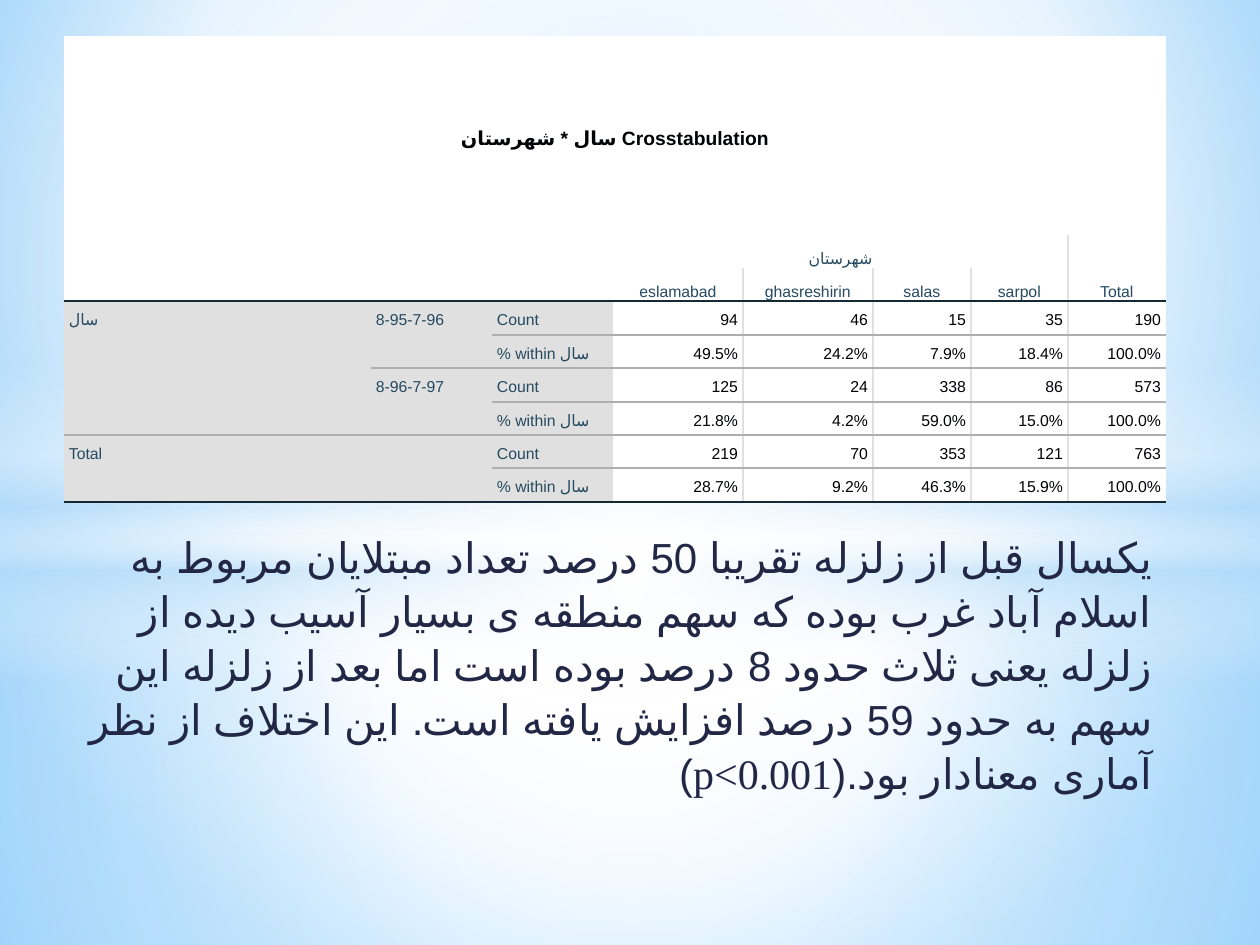
from dataclasses import dataclass
from typing import Optional

from lxml import etree
from pptx import Presentation
from pptx.dml.color import RGBColor
from pptx.enum.lang import MSO_LANGUAGE_ID as LANG
from pptx.enum.shapes import MSO_SHAPE as SHAPE
from pptx.enum.text import MSO_ANCHOR as ANCHOR, PP_ALIGN as ALIGN
from pptx.oxml import parse_xml
from pptx.oxml.ns import qn
from pptx.util import Emu, Pt

NS = "http://schemas.openxmlformats.org/drawingml/2006/main"
NO_STYLE = "{2D5ABB26-0587-4C30-8999-92F81FD0307C}"
INK, LABEL, DARK = "010205", "264A60", "152935"
WHITE, SHADE, GREY, SKY = "FFFFFF", "E0E0E0", "AEAEAE", "B4DCFA"
CENTER = (50, 50, 50, 50)


@dataclass
class Gradient:
    stops: list
    focus: Optional[tuple] = None


@dataclass
class Glow:
    shape: SHAPE
    box: tuple
    gradient: Gradient


@dataclass
class Rule:
    at: int
    first: int
    last: int
    color: str


@dataclass
class Entry:
    row: int
    col: int
    runs: list
    size: int = 9
    color: str = LABEL
    bold: bool = False
    align: ALIGN = ALIGN.LEFT
    anchor: ANCHOR = ANCHOR.TOP


BACKDROP = Gradient([(0, "9ED5FF", 100), (60, WHITE, 100), (100, "5BB9FF", 100)], (20, 10, 20, 60))
GLOWS = [
    Glow(SHAPE.RECTANGLE, (0, 533, 1260, 412),
         Gradient([(0, WHITE, 91), (37, WHITE, 76), (100, SKY, 79)], CENTER)),
    Glow(SHAPE.RECTANGLE, (0, 0, 1260, 533),
         Gradient([(0, WHITE, 89), (48, WHITE, 62), (100, SKY, 79)], CENTER)),
    Glow(SHAPE.RECTANGLE, (0, 365, 1260, 315),
         Gradient([(0, WHITE, 0), (29, WHITE, 30), (45, SKY, 40),
                   (55, WHITE, 26), (65, SKY, 60), (100, WHITE, 0)])),
    Glow(SHAPE.OVAL, (0, 221, 1260, 703),
         Gradient([(0, WHITE, 100), (54, WHITE, 0)], CENTER)),
]

COLS = [307, 121, 121, 130, 130, 98, 97, 98]
ROWS = [199, 33, 33, 34, 33, 34, 33, 33, 34]
MERGES = [(0, 0, 0, 7), (1, 0, 2, 2), (1, 3, 1, 6), (1, 7, 2, 7),
          (3, 0, 6, 0), (3, 1, 4, 1), (5, 1, 6, 1), (7, 0, 8, 1)]
ROW_RULES = [Rule(3, 0, 8, DARK), Rule(4, 2, 8, GREY), Rule(5, 1, 8, GREY), Rule(6, 2, 8, GREY),
             Rule(7, 0, 8, GREY), Rule(8, 2, 8, GREY), Rule(9, 0, 8, DARK)]
COL_RULES = [Rule(x, 2, 9, SHADE) for x in (4, 5, 6)] + [Rule(7, 1, 9, SHADE)]
CITIES = ["eslamabad", "ghasreshirin", "salas", "sarpol"]
VALUES = [
    ["94", "46", "15", "35", "190"],
    ["49.5%", "24.2%", "7.9%", "18.4%", "100.0%"],
    ["125", "24", "338", "86", "573"],
    ["21.8%", "4.2%", "59.0%", "15.0%", "100.0%"],
    ["219", "70", "353", "121", "763"],
    ["28.7%", "9.2%", "46.3%", "15.9%", "100.0%"],
]
STORY = [
    ("یکسال قبل از زلزله تقریبا 50 درصد تعداد مبتلایان مربوط به اسلام آباد غرب بوده که سهم "
     "منطقه ی بسیار آسیب دیده از زلزله یعنی ثلاث حدود 8 درصد بوده است اما بعد از زلزله این سهم "
     "به حدود 59 درصد افزایش یافته است. این اختلاف از نظر آماری معنادار بود.(", "Calibri", "Arial"),
    ("p<0.001", "Times New Roman", "Times New Roman"),
    (")", "Calibri", "Arial"),
]


def px(n: int) -> Emu:
    return Emu(round(n * 914400 / 126))


def rgb(color: str) -> RGBColor:
    return RGBColor.from_string(color)


def apply(obj, fmt: dict) -> None:
    for name, value in fmt.items():
        setattr(obj, name, value)


def gradient_xml(g: Gradient):
    stops = "".join(
        f'<a:gs pos="{pos * 1000}"><a:srgbClr val="{color}"><a:alpha val="{alpha * 1000}"/>'
        f'</a:srgbClr></a:gs>' for pos, color, alpha in g.stops)
    way = '<a:lin ang="5400000" scaled="0"/>'
    if g.focus:
        l, t, r, b = (v * 1000 for v in g.focus)
        way = f'<a:path path="circle"><a:fillToRect l="{l}" t="{t}" r="{r}" b="{b}"/></a:path>'
    return parse_xml(f'<a:gradFill xmlns:a="{NS}" rotWithShape="1"><a:gsLst>{stops}</a:gsLst>{way}</a:gradFill>')


def fill_gradient(owner, element, g: Gradient) -> None:
    owner.fill.solid()
    solid = next(element.iter(qn("a:solidFill")))
    solid.getparent().replace(solid, gradient_xml(g))


def draw_glow(s, glow: Glow) -> None:
    sp = s.shapes.add_shape(glow.shape, *map(px, glow.box))
    sp.shadow.inherit = False
    fill_gradient(sp, sp._element.spPr, glow.gradient)
    sp.line.fill.background()


def add_run(p, text: str, latin: str, complex_font: str, fmt: dict, color: str) -> None:
    r = p.add_run()
    r.text = text
    apply(r.font, {"name": latin, "language_id": LANG.FARSI, **fmt})
    r.font.color.rgb = rgb(color)
    etree.SubElement(r._r.get_or_add_rPr(), qn("a:cs"), typeface=complex_font)


def rule_color(rules: list, at: int, i: int) -> Optional[str]:
    return next((u.color for u in rules if u.at == at and u.first <= i < u.last), None)


def draw_borders(cell, row: int, col: int) -> None:
    edges = {
        "lnL": rule_color(COL_RULES, col, row),
        "lnR": rule_color(COL_RULES, col + cell.span_width, row),
        "lnT": rule_color(ROW_RULES, row, col),
        "lnB": rule_color(ROW_RULES, row + cell.span_height, col),
    }
    tc_pr = cell._tc.get_or_add_tcPr()
    for tag, color in edges.items():
        ln = etree.SubElement(tc_pr, qn(f"a:{tag}"), w=str(Pt(1)))
        fill = etree.SubElement(ln, qn("a:solidFill" if color else "a:noFill"))
        if color:
            etree.SubElement(fill, qn("a:srgbClr"), val=color)


def write_entry(table, e: Entry) -> None:
    cell = table.cell(e.row, e.col)
    cell.vertical_anchor = e.anchor
    p = cell.text_frame.paragraphs[0]
    p.alignment = e.align
    for text, font in e.runs:
        add_run(p, text, font, "Arial", {"size": Pt(e.size), "bold": e.bold}, e.color)


def table_entries() -> list:
    head = {"align": ALIGN.CENTER, "anchor": ANCHOR.BOTTOM}
    entries = [
        Entry(0, 0, [("سال", "Calibri"), (" * شهرستان Crosstabulation", "Arial")],
              11, INK, True, ALIGN.CENTER, ANCHOR.MIDDLE),
        Entry(1, 3, [("شهرستان", "Calibri")], **head),
        Entry(1, 7, [("Total", "Arial")], **head),
        Entry(3, 0, [("سال", "Calibri")]),
        Entry(3, 1, [("8-95-7-96", "Arial")]),
        Entry(5, 1, [("8-96-7-97", "Arial")]),
        Entry(7, 0, [("Total", "Arial")]),
    ]
    entries += [Entry(2, c, [(city, "Arial")], **head) for c, city in enumerate(CITIES, 3)]
    for row, values in enumerate(VALUES, 3):
        measure = "Count" if row % 2 else "% within سال"
        entries.append(Entry(row, 2, [(measure, "Arial")]))
        entries += [Entry(row, c, [(v, "Arial")], color=INK, align=ALIGN.RIGHT)
                    for c, v in enumerate(values, 3)]
    return entries


def draw_table(s) -> None:
    frame = s.shapes.add_table(len(ROWS), len(COLS), px(64), px(36), px(sum(COLS)), px(sum(ROWS)))
    table = frame.table
    apply(table, {"first_row": False, "horz_banding": False})
    table._tbl.tblPr.find(qn("a:tableStyleId")).text = NO_STYLE
    for column, width in zip(table.columns, COLS):
        column.width = px(width)
    for row, height in zip(table.rows, ROWS):
        row.height = px(height)
    for top, left, bottom, right in MERGES:
        table.cell(top, left).merge(table.cell(bottom, right))
    for row in range(len(ROWS)):
        for col in range(len(COLS)):
            cell = table.cell(row, col)
            apply(cell, {"margin_left": px(5), "margin_right": px(5), "margin_top": 0, "margin_bottom": 0})
            cell.text_frame.paragraphs[0].line_spacing = Pt(16)
            draw_borders(cell, row, col)
            cell.fill.solid()
            cell.fill.fore_color.rgb = rgb(SHADE if row > 2 and col < 3 else WHITE)
    for entry in table_entries():
        write_entry(table, entry)


def draw_story(s) -> None:
    tf = s.shapes.add_textbox(px(54), px(522), px(1111), px(348)).text_frame
    tf.word_wrap = True
    p = tf.paragraphs[0]
    apply(p, {"alignment": ALIGN.RIGHT, "line_spacing": 1.07, "space_before": Pt(5), "space_after": Pt(8)})
    p._p.get_or_add_pPr().set("rtl", "1")
    for text, latin, complex_font in STORY:
        add_run(p, text, latin, complex_font, {"size": Pt(24)}, "212745")


def main() -> None:
    prs = Presentation()
    apply(prs, {"slide_width": px(1260), "slide_height": px(945)})
    s = prs.slides.add_slide(prs.slide_layouts[6])
    fill_gradient(s.background, s._element, BACKDROP)
    for glow in GLOWS:
        draw_glow(s, glow)
    draw_story(s)
    draw_table(s)
    prs.save("out.pptx")


if __name__ == "__main__":
    main()
